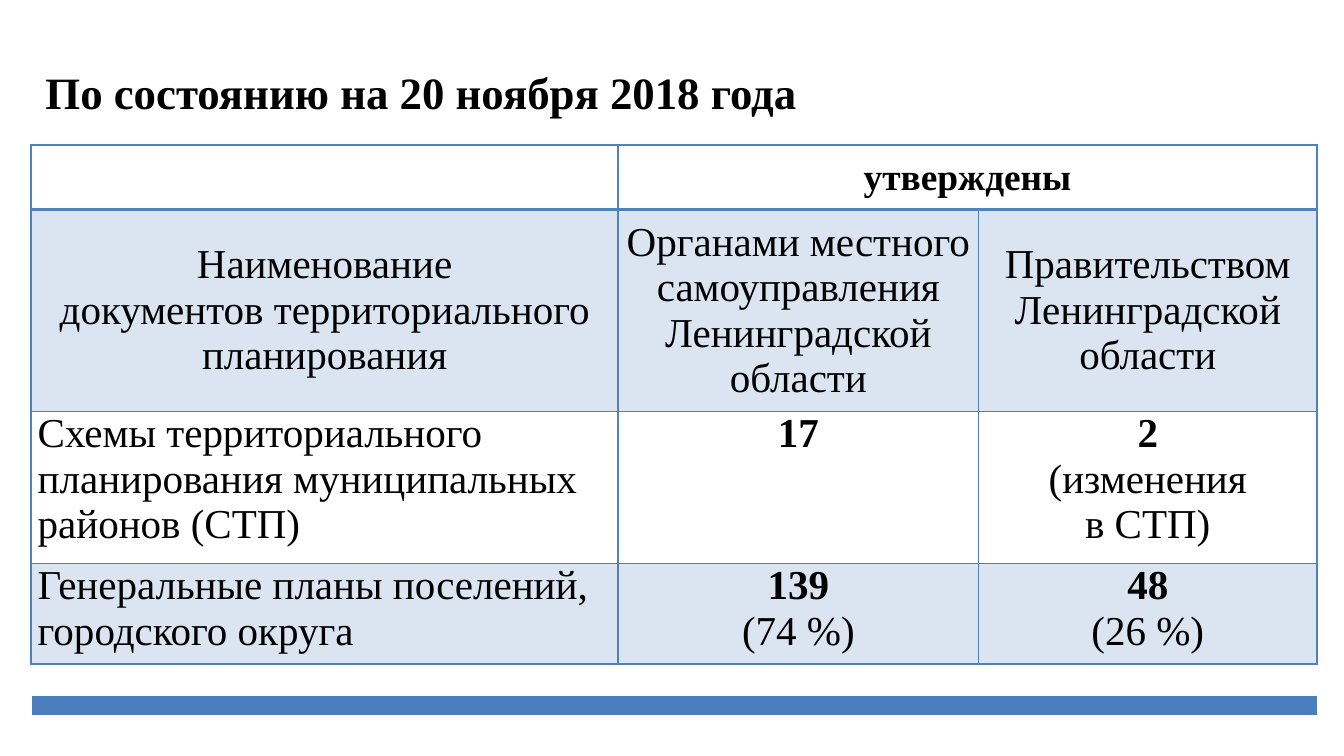
from lxml import etree
from pptx import Presentation
from pptx.dml.color import RGBColor
from pptx.enum import shapes, text
from pptx.oxml import ns
from pptx.util import Pt

TITLE = "По состоянию на 20 ноября 2018 года"
ROWS = [
    [[], ["утверждены"], []],
    [
        ["Наименование", "документов территориального планирования"],
        ["Органами местного самоуправления Ленинградской области"],
        ["Правительством Ленинградской области"],
    ],
    [
        ["Схемы территориального планирования муниципальных районов (СТП)"],
        ["17"],
        ["2", "(изменения", "в СТП)"],
    ],
    [
        ["Генеральные планы поселений, городского округа"],
        ["139", "(74 %)"],
        ["48", "(26 %)"],
    ],
]
WIDTHS = [314.6, 193, 181.4]
HEIGHTS = [34.6, 108, 81.4, 54]
FONT = "Times New Roman"
BLUE, BAR, BLACK = "4F81BD", "4B7EBC", "000000"
TINT_ALPHA = 20
MARGINS = {"margin_left": Pt(3.6), "margin_right": Pt(3.6), "margin_top": 0, "margin_bottom": 0}


def color(value):
    return RGBColor.from_string(value)


def assign(target, values):
    for name, value in values.items():
        setattr(target, name, value)


def write(para, words, size, bold):
    span = para.add_run()
    span.text = words
    assign(span.font, {"name": FONT, "size": Pt(size), "bold": bold})
    span.font.color.rgb = color(BLACK)


def tint(cell):
    cell.fill.solid()
    cell.fill.fore_color.rgb = color(BLUE)
    srgb = cell._tc.tcPr.find(".//" + ns.qn("a:srgbClr"))
    etree.SubElement(srgb, ns.qn("a:alpha"), val=str(TINT_ALPHA * 1000))


def outline(cell, widths):
    props = cell._tc.get_or_add_tcPr()
    for place, (side, width) in enumerate(widths.items()):
        line = etree.Element(ns.qn("a:ln" + side), w=str(Pt(width)))
        fill = etree.SubElement(line, ns.qn("a:solidFill"))
        etree.SubElement(fill, ns.qn("a:srgbClr"), val=BLUE)
        props.insert(place, line)


def fill_cell(cell, lines, row, column):
    heading = row < 2
    assign(cell, MARGINS)
    cell.vertical_anchor = text.MSO_ANCHOR.MIDDLE if heading else text.MSO_ANCHOR.TOP
    size = 20 if row == 0 else 22
    frame = cell.text_frame
    frame.paragraphs[0].font.size = Pt(size)
    for index, words in enumerate(lines):
        para = frame.add_paragraph() if index else frame.paragraphs[0]
        centred = heading or column > 0
        para.alignment = text.PP_ALIGN.CENTER if centred else text.PP_ALIGN.LEFT
        bold = row == 0 or (row > 1 and column > 0 and index == 0)
        write(para, words, size, bold)
    if row % 2:
        tint(cell)
    else:
        cell.fill.background()
    outline(cell, {"L": 1, "R": 1, "T": 2 if row == 1 else 1, "B": 2 if row == 0 else 1})


def add_grid(page):
    table = page.shapes.add_table(
        len(ROWS), len(WIDTHS), Pt(16.6), Pt(77.8), Pt(sum(WIDTHS)), Pt(sum(HEIGHTS))
    ).table
    assign(table, {"first_row": False, "horz_banding": False})
    for column, width in zip(table.columns, WIDTHS):
        column.width = Pt(width)
    for row, height in zip(table.rows, HEIGHTS):
        row.height = Pt(height)
    table.cell(0, 1).merge(table.cell(0, 2))
    for row, cells in enumerate(ROWS):
        for column, lines in enumerate(cells):
            fill_cell(table.cell(row, column), lines, row, column)


def add_bar(page):
    bar = page.shapes.add_connector(
        shapes.MSO_CONNECTOR.STRAIGHT, Pt(17.3), Pt(378), Pt(705.6), Pt(378)
    )
    bar.line.width = Pt(10)
    bar.line.color.rgb = color(BAR)
    etree.SubElement(bar._element.spPr, ns.qn("a:effectLst"))


def add_title(page):
    box = page.shapes.add_textbox(Pt(17.3), Pt(31), Pt(689), Pt(36))
    assign(box.text_frame, {"word_wrap": True, "auto_size": text.MSO_AUTO_SIZE.SHAPE_TO_FIT_TEXT})
    write(box.text_frame.paragraphs[0], TITLE, 24, True)


def main():
    deck = Presentation()
    assign(deck, {"slide_width": Pt(720), "slide_height": Pt(405)})
    page = deck.slides.add_slide(deck.slide_layouts[6])
    add_bar(page)
    add_grid(page)
    add_title(page)
    deck.save("out.pptx")


if __name__ == "__main__":
    main()
